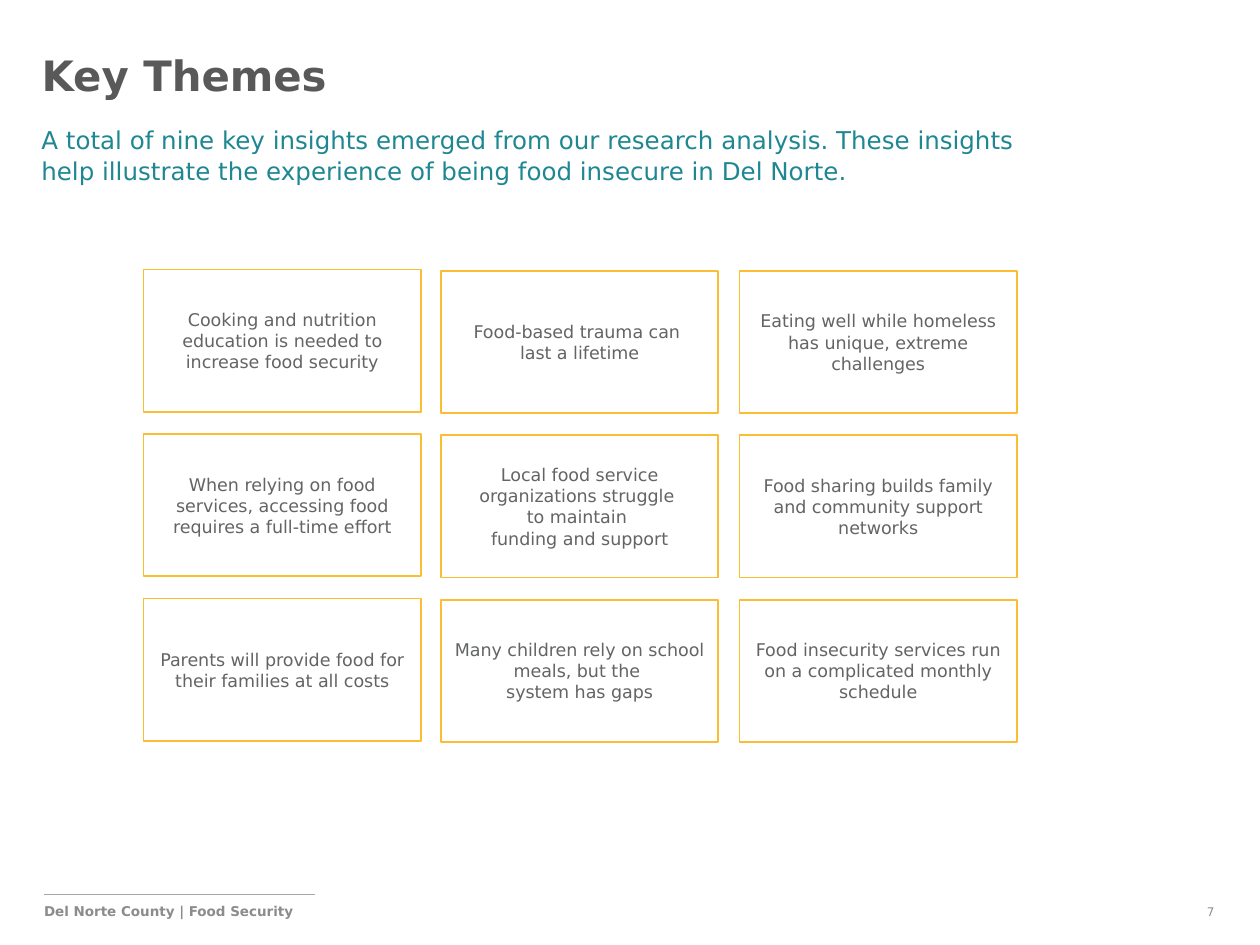
from dataclasses import dataclass

from lxml.etree import SubElement
from pptx import Presentation
from pptx.dml.color import RGBColor
from pptx.enum.shapes import MSO_CONNECTOR, MSO_SHAPE
from pptx.enum.text import MSO_ANCHOR, MSO_AUTO_SIZE, PP_ALIGN
from pptx.oxml.ns import qn
from pptx.util import Inches, Pt


@dataclass(frozen=True)
class Theme:
    font: str = "DejaVu Sans"
    title: str = "595959"
    subtitle: str = "1E8792"
    body: str = "636466"
    footer: str = "8C8C8C"
    border: str = "FBBE32"
    rule: str = "A6A6A6"
    white: str = "FFFFFF"
    title_size: float = 23.9
    subtitle_size: float = 14
    body_size: float = 10
    footer_size: float = 7.7
    number_size: float = 6.8


theme = Theme()


def write_text(shape, text, size, color, bold=False, align=PP_ALIGN.LEFT,
               anchor=MSO_ANCHOR.TOP, insets=(0.1, 0.05, 0.1, 0.05), spacing=None):
    frame = shape.text_frame
    frame.text = text
    frame.word_wrap = True
    frame.auto_size = MSO_AUTO_SIZE.NONE
    frame.vertical_anchor = anchor
    frame.margin_left, frame.margin_top, frame.margin_right, frame.margin_bottom = map(Inches, insets)
    paragraph = frame.paragraphs[0]
    paragraph.alignment = align
    paragraph.line_spacing = spacing
    for run in paragraph.runs:
        run.font.name = theme.font
        run.font.size = Pt(size)
        run.font.bold = bold
        run.font.color.rgb = RGBColor.from_string(color)


def add_text(left, top, width, height, *content, **style):
    box = slide.shapes.add_textbox(Inches(left), Inches(top), Inches(width), Inches(height))
    write_text(box, *content, **style)


presentation = Presentation()
presentation.slide_width = Inches(10)
presentation.slide_height = Inches(7.5)
slide = presentation.slides.add_slide(presentation.slide_layouts[5])

title = slide.shapes.title
title.left, title.top, title.width, title.height = map(Inches, (0.23, 0.44, 8.63, 0.55))
write_text(title, "Key Themes", theme.title_size, theme.title, bold=True,
           insets=(0.1, 0, 0.1, 0), spacing=0.9)

add_text(0.23, 0.94, 8.17, 0.83,
         "A total of nine key insights emerged from our research analysis. "
         "These insights help illustrate the experience of being food insecure in Del Norte.",
         theme.subtitle_size, theme.subtitle, spacing=Pt(17.3))

insight_columns = [
    (1.14, 2.14, [
        "Cooking and nutrition education is needed to increase food security",
        "When relying on food services, accessing food requires a full-time effort",
        "Parents will provide food for their families at all costs",
    ]),
    (3.5, 2.15, [
        "Food-based trauma can \vlast a lifetime",
        "Local food service organizations struggle \vto maintain \vfunding and support",
        "Many children rely on school meals, but the \vsystem has gaps",
    ]),
    (5.87, 2.15, [
        "Eating well while homeless has unique, extreme challenges",
        "Food sharing builds family and community support networks",
        "Food insecurity services run on a complicated monthly schedule",
    ]),
]
row_pitch = 1.305

for left, top, insights in insight_columns:
    for row, insight in enumerate(insights):
        card = slide.shapes.add_shape(MSO_SHAPE.RECTANGLE, Inches(left),
                                      Inches(top + row * row_pitch), Inches(2.2), Inches(1.13))
        card.shadow.inherit = False
        card.fill.solid()
        card.fill.fore_color.rgb = RGBColor.from_string(theme.white)
        card.line.color.rgb = RGBColor.from_string(theme.border)
        card.line.width = Pt(1)
        write_text(card, insight, theme.body_size, theme.body,
                   align=PP_ALIGN.CENTER, anchor=MSO_ANCHOR.MIDDLE)

add_text(0.35, 7.1, 4.28, 0.28, "Del Norte County | Food Security",
         theme.footer_size, theme.footer, bold=True, insets=(0, 0.07, 0, 0))
add_text(7.53, 7.1, 2.11, 0.23, "7", theme.number_size, theme.footer,
         align=PP_ALIGN.RIGHT, insets=(0, 0.08, 0, 0))

footer_rule = slide.shapes.add_connector(MSO_CONNECTOR.STRAIGHT, Inches(0.35), Inches(7.1),
                                         Inches(2.5), Inches(7.1))
footer_rule.line.color.rgb = RGBColor.from_string(theme.rule)
footer_rule.line.width = Pt(0.5)
SubElement(footer_rule._element.spPr, qn("a:effectLst"))

presentation.save("out.pptx")
